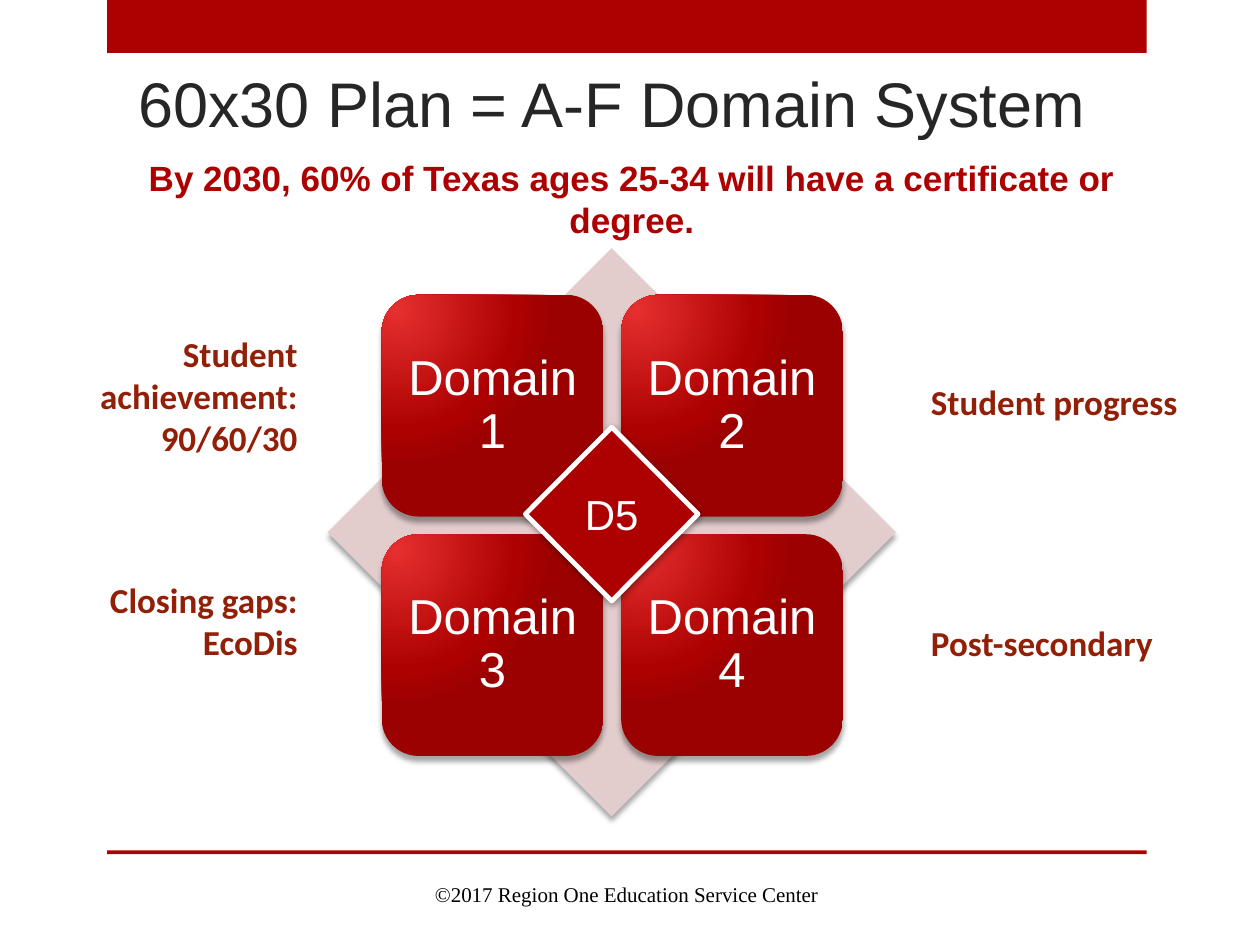
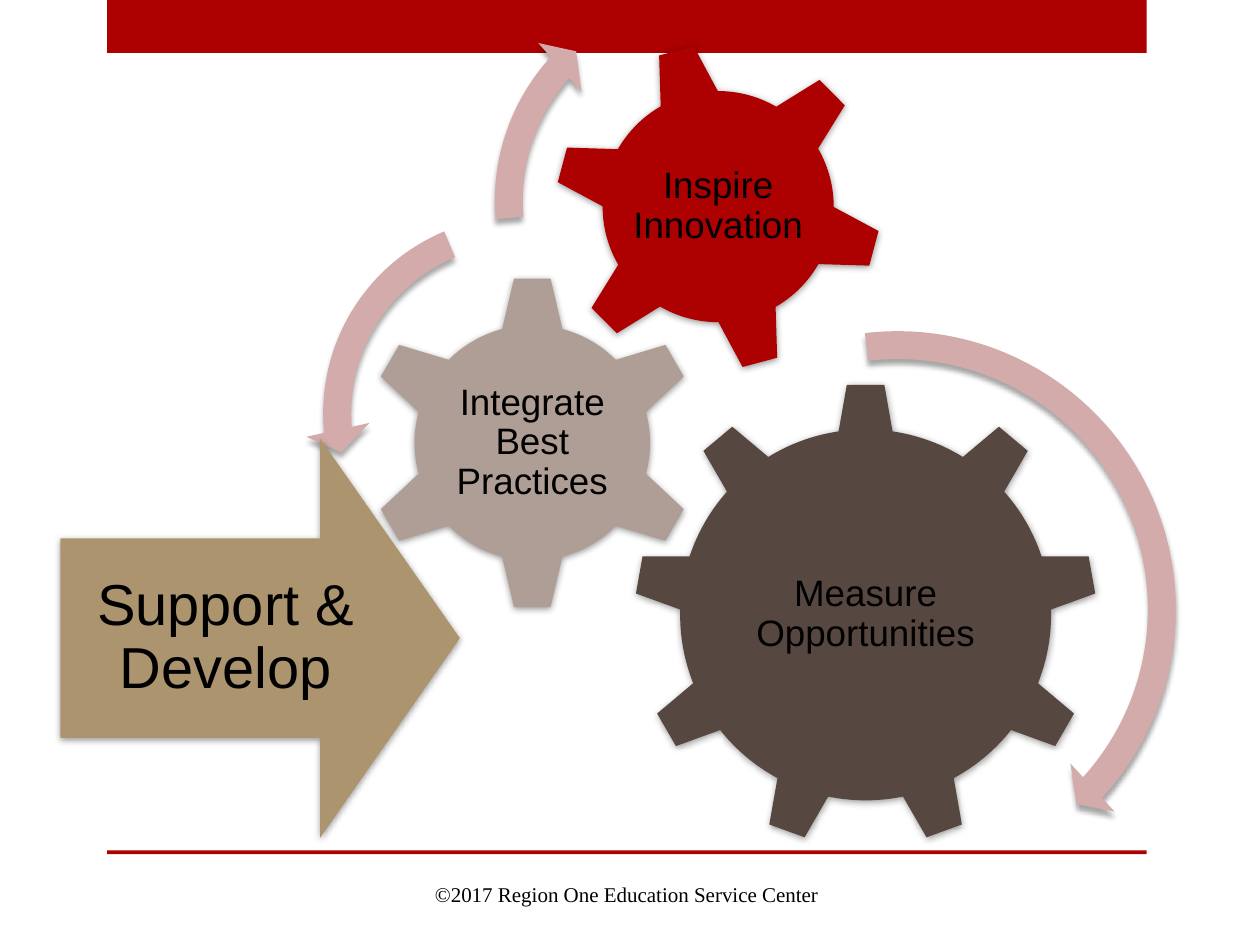
from pptx import Presentation
from pptx.dml.color import RGBColor
from pptx.enum.shapes import MSO_SHAPE
from pptx.enum.text import MSO_ANCHOR, PP_ALIGN
from pptx.oxml import parse_xml
from pptx.oxml.ns import nsdecls, qn
from pptx.util import Inches, Pt

RED = RGBColor(0xAD, 0x01, 0x01)
GLOW = RGBColor(0xE6, 0x2F, 0x2F)
DEEP = RGBColor(0x9C, 0x01, 0x01)
RUST = RGBColor(0x92, 0x1F, 0x07)
BLUSH = RGBColor(0xE3, 0xCC, 0xCC)
ROSE = RGBColor(0xD3, 0xAB, 0xAB)
BROWN = RGBColor(0x56, 0x48, 0x41)
TAUPE = RGBColor(0xAF, 0x9E, 0x95)
SAND = RGBColor(0xAC, 0x95, 0x6E)
INK = RGBColor(0x26, 0x26, 0x26)
BLACK = RGBColor(0, 0, 0)
WHITE = RGBColor(0xFF, 0xFF, 0xFF)

RECT = MSO_SHAPE.RECTANGLE
ROUND = MSO_SHAPE.ROUNDED_RECTANGLE
DIAMOND = MSO_SHAPE.DIAMOND
GEAR_SIX = MSO_SHAPE.GEAR_6
GEAR_NINE = MSO_SHAPE.GEAR_9
ARC = MSO_SHAPE.CIRCULAR_ARROW
LEFT_ARC = MSO_SHAPE.LEFT_CIRCULAR_ARROW
ARROW = MSO_SHAPE.RIGHT_ARROW
LEFT, MID, RIGHT = PP_ALIGN.LEFT, PP_ALIGN.CENTER, PP_ALIGN.RIGHT
TOP, HALF, LOW = MSO_ANCHOR.TOP, MSO_ANCHOR.MIDDLE, MSO_ANCHOR.BOTTOM

SOFT = dict(alpha=35, blur=3, dist=3, turn=90)
TIGHT = dict(alpha=40, blur=4, dist=1, turn=88)

TITLE = dict(name="Arial", size=Pt(36))
LEAD = dict(name="Arial", size=Pt(20), bold=True)
TILE = dict(name="Arial", size=Pt(28))
CORE = dict(name="Arial", size=Pt(24))
GEAR = dict(name="Arial", size=Pt(21))
PUSH = dict(name="Arial", size=Pt(33))
SIDE = dict(name="Calibri", size=Pt(20), bold=True)
FOOT = dict(name="Times New Roman", size=Pt(12))


def write(shape, text, style, color, align=MID, anchor=HALF, inset=None, space=None):
    frame = shape.text_frame
    frame.word_wrap = True
    frame.vertical_anchor = anchor
    if inset is not None:
        for side in ("left", "top", "right", "bottom"):
            setattr(frame, f"margin_{side}", Inches(inset))
    frame.text = text
    for para in frame.paragraphs:
        para.alignment = align
        para.line_spacing = space
        font = para.runs[0].font
        font.color.rgb = color
        for key, value in style.items():
            setattr(font, key, value)


def label(slide, box, *words, **look):
    area = slide.shapes.add_textbox(*map(Inches, box))
    write(area, *words, **look)


def cast(shape, alpha, blur, dist, turn):
    shadow = parse_xml(
        f'<a:outerShdw {nsdecls("a")} blurRad="{Pt(blur)}" dist="{Pt(dist)}" '
        f'dir="{turn * 60000}" rotWithShape="0"><a:srgbClr val="000000">'
        f'<a:alpha val="{alpha * 1000}"/></a:srgbClr></a:outerShdw>')
    shape._element.spPr.find(qn("a:effectLst")).append(shadow)


def draw(slide, kind, box, color, shade=None, turns=()):
    shape = slide.shapes.add_shape(kind, *map(Inches, box))
    shape.fill.solid()
    shape.fill.fore_color.rgb = color
    shape.line.fill.background()
    shape.shadow.inherit = False
    if shade:
        cast(shape, **shade)
    for index, value in enumerate(turns):
        shape.adjustments[index] = value
    return shape


def glow(shape):
    stops = "".join(
        f'<a:gs pos="{place * 1000}"><a:srgbClr val="{color}"/></a:gs>'
        for place, color in ((0, GLOW), (76, RED), (100, DEEP)))
    fill = parse_xml(
        f'<a:gradFill {nsdecls("a")} rotWithShape="1"><a:gsLst>{stops}</a:gsLst>'
        '<a:path path="circle"><a:fillToRect l="15000" t="15000" r="100000" b="100000"/>'
        '</a:path></a:gradFill>')
    props = shape._element.spPr
    props.replace(props.find(qn("a:solidFill")), fill)


def frame_page(deck):
    slide = deck.slides.add_slide(deck.slide_layouts[6])
    for top, height in ((0, 0.42), (6.75, 0.03)):
        draw(slide, RECT, (0.85, top, 8.25, height), RED)
    return slide


def foot(slide):
    label(slide, (0.87, 6.9, 8.21, 0.4), "©2017 Region One Education Service Center", FOOT, BLACK)


def grid(slide, left, top, size):
    draw(slide, DIAMOND, (left, top, size, size), BLUSH, SOFT)
    for index in range(4):
        row, col = divmod(index, 2)
        box = (left + 0.43 + 1.9 * col, top + 0.37 + 1.9 * row, 1.76, 1.76)
        tile = draw(slide, ROUND, box, RED, SOFT)
        glow(tile)
        write(tile, f"Domain {index + 1}", TILE, WHITE, inset=0.12, space=0.9)
    core = draw(slide, DIAMOND, (left + 1.57, top + 1.42, 1.37, 1.38), RED, TIGHT)
    core.line.color.rgb = WHITE
    core.line.width = Pt(2.75)
    write(core, "D5", CORE, WHITE)


def sides(slide):
    for box, text, align in (
        ((0, 2.59, 2.46, 1.11), "Student achievement:\n90/60/30", RIGHT),
        ((7.29, 2.97, 2.58, 0.44), "Student progress", LEFT),
        ((0.14, 4.54, 2.32, 0.77), "Closing gaps: EcoDis", RIGHT),
        ((7.29, 4.88, 2.58, 0.44), "Post-secondary", LEFT),
    ):
        label(slide, box, text, SIDE, RUST, align=align, anchor=TOP)


def gear(slide, kind, left, top, size, color, text, wide, tall, spin=0):
    wheel = draw(slide, kind, (left, top, size, size), color, TIGHT)
    wheel.rotation = spin
    box = (left + (size - wide) / 2, top + (size - tall) / 2, wide, tall)
    label(slide, box, text, GEAR, BLACK, inset=0.03, space=0.9)


def arcs(slide):
    for kind, left, top, size, turns in (
        (ARC, 4.77, 2.48, 4.71, (0.047, 2.99, 25.487, 157.93, 0.055)),
        (LEFT_ARC, 2.42, 1.57, 3.42, (0.065, 4.3, 104.891, 148.378, 0.075)),
        (ARC, 3.78, -0.25, 3.69, (0.06, 3.941, 133.138, 105.082, 0.07)),
    ):
        draw(slide, kind, (left, top, size, size), ROSE, SOFT, turns)


def push(slide, left, top, size):
    draw(slide, ARROW, (left, top, size, size), SAND, TIGHT, (0.5, 0.35))
    box = (left, top + size / 4, 2.62, size / 2)
    label(slide, box, "Support & Develop", PUSH, BLACK, inset=0.26, space=0.9)


def plan_page(deck):
    slide = frame_page(deck)
    label(slide, (1, 0.34, 8, 0.82), "60x30 Plan = A-F Domain System", TITLE, INK,
          align=LEFT, anchor=LOW)
    label(slide, (0.55, 1.19, 8.93, 0.44),
          "By 2030, 60% of Texas ages 25-34 will have a certificate or degree.",
          LEAD, RED, anchor=TOP)
    grid(slide, 2.6, 1.97, 4.51)
    sides(slide)
    foot(slide)


def gear_page(deck):
    slide = frame_page(deck)
    gear(slide, GEAR_NINE, 5.03, 3.04, 3.68, BROWN, "Measure Opportunities", 2.2, 1.89)
    gear(slide, GEAR_SIX, 2.89, 2.18, 2.67, TAUPE, "Integrate Best Practices", 1.33, 1.32)
    gear(slide, GEAR_SIX, 4.39, 0.33, 2.62, RED, "Inspire Innovation", 1.47, 1.47, 345)
    arcs(slide)
    push(slide, 0.48, 3.48, 3.17)
    foot(slide)


def main():
    deck = Presentation()
    deck.slide_width = Inches(10)
    deck.slide_height = Inches(7.5)
    plan_page(deck)
    gear_page(deck)
    deck.save("out.pptx")


if __name__ == "__main__":
    main()
